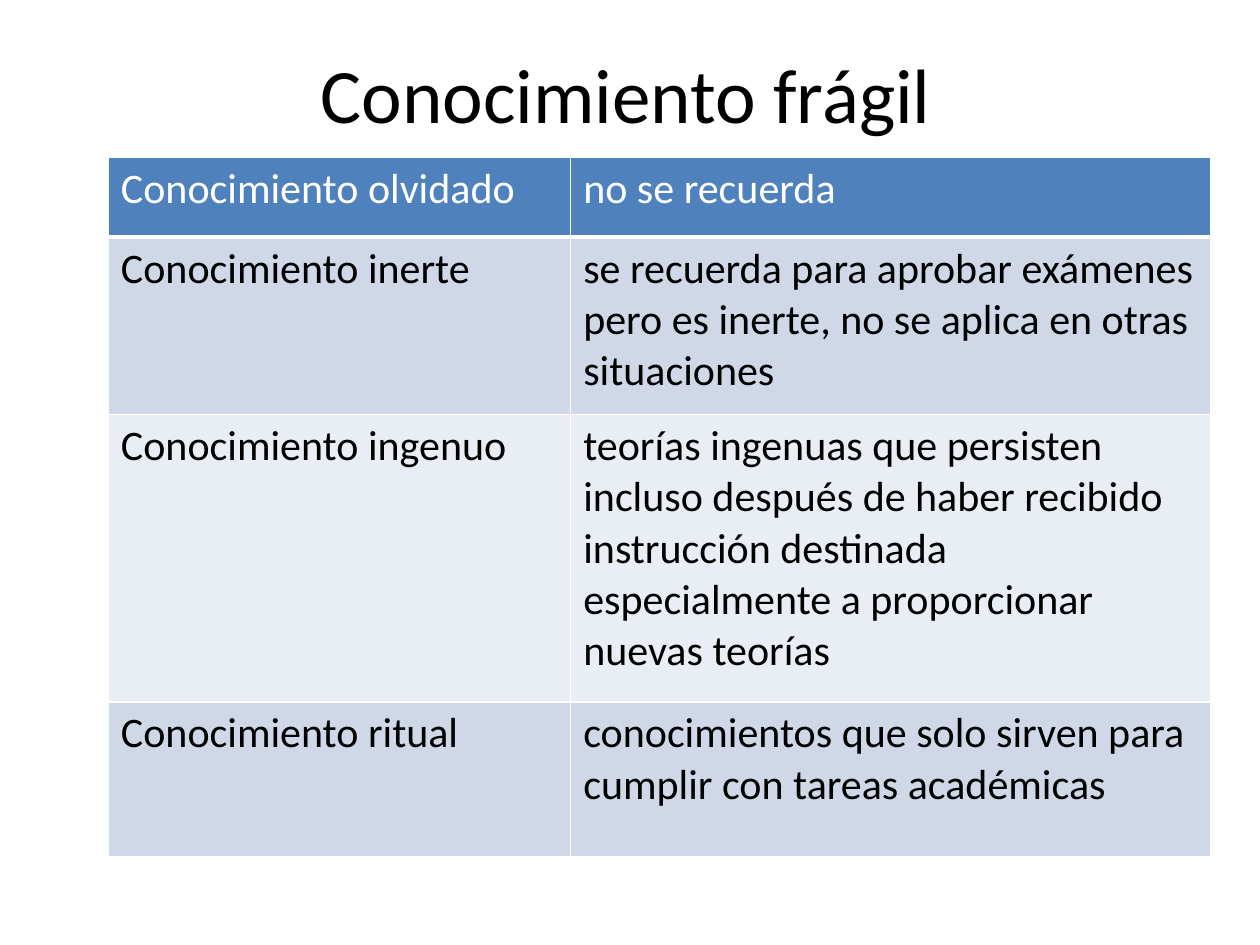
from lxml import etree
from pptx import Presentation
from pptx import util as u
from pptx.dml import color
from pptx.enum import text
from pptx.oxml import ns

FONT = "Calibri"
WHITE, BLACK, BLUE = "FFFFFF", "000000", "4F81BD"
BANDS = ("E9EDF4", "D0D8E8")
COLS = (3.67, 5.08)
ROW_HEIGHTS = (0.63, 1.41, 2.28, 1.23)
ROWS = (
    ("Conocimiento olvidado", "no se recuerda"),
    ("Conocimiento inerte",
     "se recuerda para aprobar exámenes pero es inerte, "
     "no se aplica en otras situaciones"),
    ("Conocimiento ingenuo",
     "teorías ingenuas que persisten incluso después de haber recibido "
     "instrucción destinada especialmente a proporcionar nuevas teorías"),
    ("Conocimiento ritual",
     "conocimientos que solo sirven para cumplir con tareas académicas"),
)


def rgb(value):
    """Turn a hex string into a colour."""
    return color.RGBColor.from_string(value)


def add_run(p, wording, size, ink):
    """Add one formatted run to a paragraph."""
    r = p.add_run()
    r.text = wording
    r.font.name = FONT
    r.font.size = u.Pt(size)
    r.font.color.rgb = rgb(ink)


def add_title(s, wording):
    """Add the centred slide title."""
    sp = s.shapes.add_textbox(u.Inches(0.47), u.Inches(0.31), u.Inches(9), u.Inches(0.86))
    tf = sp.text_frame
    tf.word_wrap = True
    tf.vertical_anchor = text.MSO_ANCHOR.MIDDLE
    p = tf.paragraphs[0]
    p.alignment = text.PP_ALIGN.CENTER
    add_run(p, wording, 44, BLACK)


def add_borders(cell, bottom):
    """Draw white borders round a cell, with its own bottom width."""
    tc_pr = cell._tc.get_or_add_tcPr()
    for side, width in (("L", 1), ("R", 1), ("T", 1), ("B", bottom)):
        ln = etree.SubElement(tc_pr, ns.qn(f"a:ln{side}"), w=str(u.Pt(width)))
        fill = etree.SubElement(ln, ns.qn("a:solidFill"))
        etree.SubElement(fill, ns.qn("a:srgbClr"), val=WHITE)


def fill_cell(cell, wording, is_header, fill):
    """Give a cell its borders, fill and wording."""
    add_borders(cell, 3 if is_header else 1)
    cell.fill.solid()
    cell.fill.fore_color.rgb = rgb(fill)
    add_run(cell.text_frame.paragraphs[0], wording, 24, WHITE if is_header else BLACK)


def add_knowledge_table(s):
    """Add the banded table of kinds of knowledge."""
    table = s.shapes.add_table(
        len(ROWS), len(COLS), u.Inches(0.86), u.Inches(1.25),
        u.Inches(sum(COLS)), u.Inches(sum(ROW_HEIGHTS))).table
    for column, width in zip(table.columns, COLS):
        column.width = u.Inches(width)
    for i, (height, wordings) in enumerate(zip(ROW_HEIGHTS, ROWS)):
        table.rows[i].height = u.Inches(height)
        fill = BANDS[i % 2] if i else BLUE
        for j, wording in enumerate(wordings):
            fill_cell(table.cell(i, j), wording, i == 0, fill)


def main():
    """Build and save the slide."""
    prs = Presentation()
    prs.slide_width, prs.slide_height = u.Inches(10), u.Inches(7.5)
    s = prs.slides.add_slide(prs.slide_layouts[6])
    add_title(s, "Conocimiento frágil")
    add_knowledge_table(s)
    prs.save("out.pptx")


if __name__ == "__main__":
    main()
